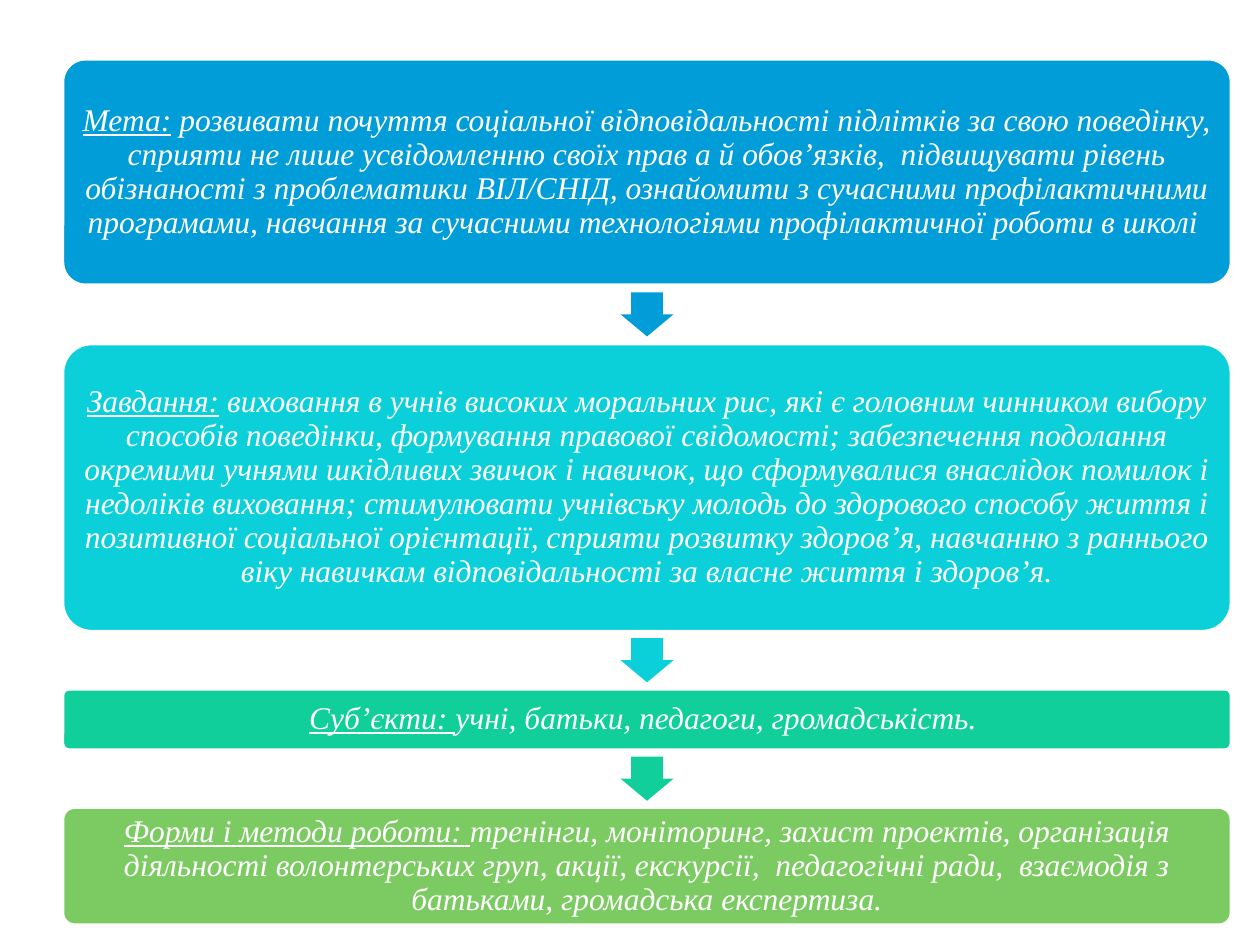
"""Build a slide with four programme stages linked by down arrows."""
import itertools
from dataclasses import dataclass

import pptx
import pptx.dml.color
import pptx.enum.shapes
import pptx.enum.text
import pptx.util

Inches = pptx.util.Inches
Pt = pptx.util.Pt
RGBColor = pptx.dml.color.RGBColor
MSO_SHAPE = pptx.enum.shapes.MSO_SHAPE

WHITE = RGBColor(0xFF, 0xFF, 0xFF)
BLUE = RGBColor(0x00, 0x9D, 0xD9)
CYAN = RGBColor(0x0B, 0xD0, 0xD9)
TEAL = RGBColor(0x10, 0xCF, 0x9B)
GREEN = RGBColor(0x7C, 0xCA, 0x62)

LEFT, WIDTH = 0.5, 9.27
ARROW_WIDTH, ARROW_HEIGHT = 0.42, 0.35
INSET = Inches(0.07)
FONT = {"name": "Times New Roman", "size": Pt(18), "italic": True}
FRAME = {
    "word_wrap": True,
    "vertical_anchor": pptx.enum.text.MSO_ANCHOR.MIDDLE,
    "margin_left": INSET,
    "margin_right": INSET,
    "margin_top": INSET,
    "margin_bottom": INSET,
}
PARAGRAPH = {"alignment": pptx.enum.text.PP_ALIGN.CENTER, "line_spacing": 0.9}


@dataclass(frozen=True)
class Stage:
    """A coloured box with an underlined heading and its text."""

    top: float
    height: float
    color: RGBColor
    heading: str
    body: str

    @property
    def bottom(self) -> float:
        """Return the lower edge in inches."""
        return self.top + self.height


STAGES = [
    Stage(0.47, 1.79, BLUE, "Мета:",
          " розвивати почуття соціальної відповідальності підлітків за свою "
          "поведінку, сприяти не лише усвідомленню своїх прав а й обов’язків,  "
          "підвищувати рівень обізнаності з проблематики ВІЛ/СНІД, ознайомити з "
          "сучасними профілактичними програмами, навчання за сучасними "
          "технологіями профілактичної роботи в школі "),
    Stage(2.73, 2.28, CYAN, "Завдання:",
          " виховання в учнів високих моральних рис, які є головним чинником "
          "вибору способів поведінки, формування правової свідомості; "
          "забезпечення подолання окремими учнями шкідливих звичок і навичок, що "
          "сформувалися внаслідок помилок і недоліків виховання; стимулювати "
          "учнівську молодь до здорового способу життя і позитивної соціальної "
          "орієнтації, сприяти розвитку здоров’я, навчанню з раннього віку "
          "навичкам відповідальності за власне життя і здоров’я."),
    Stage(5.47, 0.48, TEAL, "Суб’єкти: ",
          "учні, батьки, педагоги, громадськість. "),
    Stage(6.41, 0.93, GREEN, "Форми і методи роботи: ",
          "тренінги, моніторинг, захист проектів, організація діяльності "
          "волонтерських груп, акції, екскурсії,  педагогічні ради,  взаємодія з "
          "батьками, громадська експертиза."),
]


def apply(target: object, values: dict) -> None:
    """Set each attribute named in values."""
    for name, value in values.items():
        setattr(target, name, value)


def draw_stage(s: pptx.slide.Slide, stage: Stage) -> None:
    """Draw one rounded box with its text."""
    sp = s.shapes.add_shape(MSO_SHAPE.ROUNDED_RECTANGLE, Inches(LEFT),
                            Inches(stage.top), Inches(WIDTH), Inches(stage.height))
    sp.shadow.inherit = False
    sp.adjustments[0] = 0.1
    sp.fill.solid()
    sp.fill.fore_color.rgb = stage.color
    sp.line.color.rgb = WHITE
    sp.line.width = Pt(1.54)
    tf = sp.text_frame
    apply(tf, FRAME)
    p = tf.paragraphs[0]
    apply(p, PARAGRAPH)
    for text, underline in ((stage.heading, True), (stage.body, False)):
        r = p.add_run()
        r.text = text
        apply(r.font, FONT | {"underline": underline})
        r.font.color.rgb = WHITE


def draw_arrow(s: pptx.slide.Slide, upper: Stage, lower: Stage) -> None:
    """Draw a down arrow centred between two stages."""
    left = LEFT + (WIDTH - ARROW_WIDTH) / 2
    top = (upper.bottom + lower.top - ARROW_HEIGHT) / 2
    sp = s.shapes.add_shape(MSO_SHAPE.DOWN_ARROW, Inches(left), Inches(top),
                            Inches(ARROW_WIDTH), Inches(ARROW_HEIGHT))
    sp.shadow.inherit = False
    sp.adjustments[0] = 0.6
    sp.adjustments[1] = 0.5
    sp.fill.solid()
    sp.fill.fore_color.rgb = upper.color
    sp.line.fill.background()


def main() -> None:
    """Create and save the presentation."""
    prs = pptx.Presentation()
    prs.slide_width, prs.slide_height = Inches(10), Inches(7.5)
    s = prs.slides.add_slide(prs.slide_layouts[6])
    for stage in STAGES:
        draw_stage(s, stage)
    for upper, lower in itertools.pairwise(STAGES):
        draw_arrow(s, upper, lower)
    prs.save("out.pptx")


if __name__ == "__main__":
    main()
